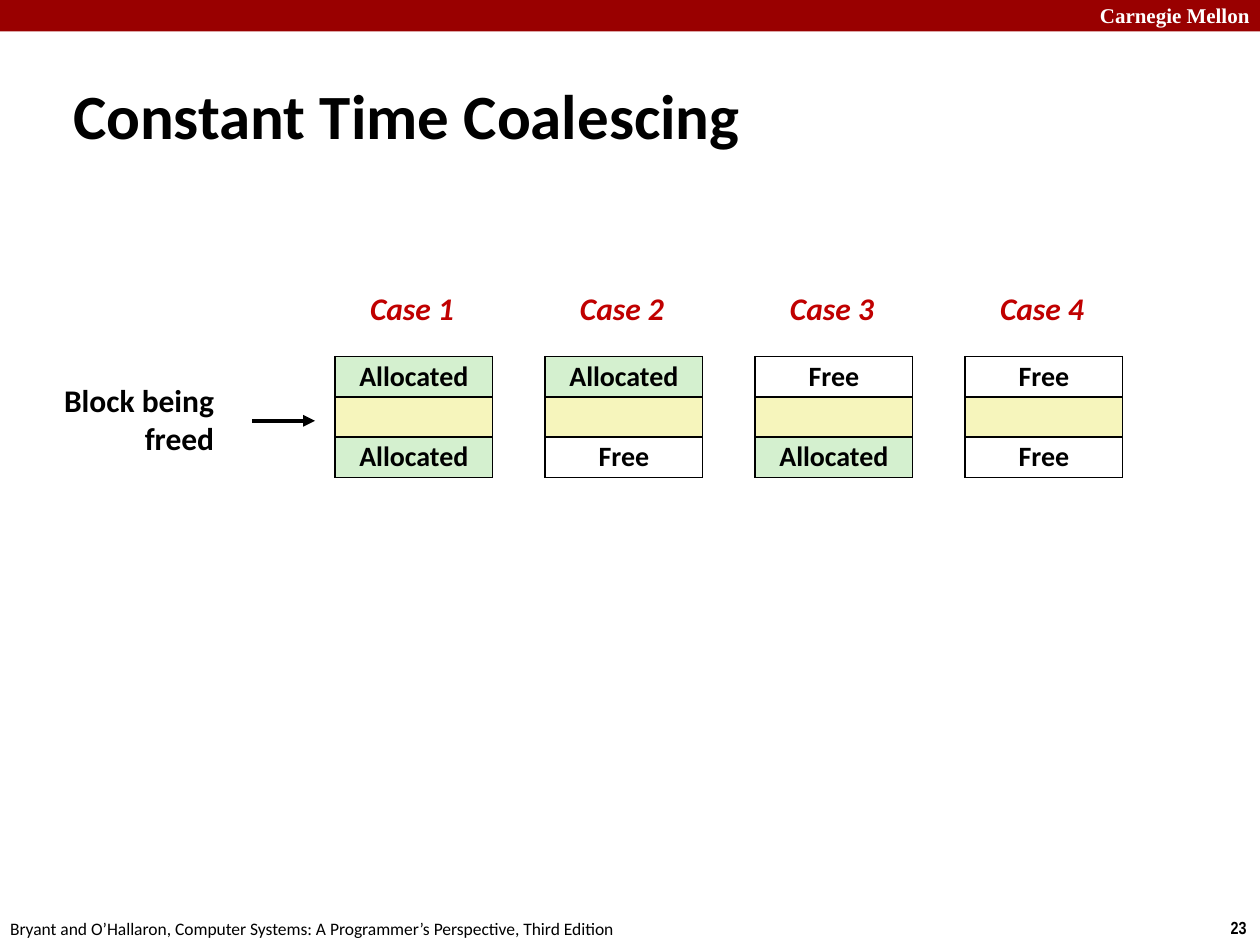
import pptx
import pptx.dml.color
import pptx.enum.shapes
import pptx.enum.text
import pptx.oxml
import pptx.oxml.ns
import pptx.util

Inches, Pt = pptx.util.Inches, pptx.util.Pt
ALIGN = pptx.enum.text.PP_ALIGN
MIDDLE = pptx.enum.text.MSO_ANCHOR.MIDDLE

COLORS = {"banner": "990000", "case": "C00000", "text": "000000", "white": "FFFFFF",
          "allocated": "D4F0CF", "freed": "F6F5BC"}

# Content
TITLE = "Constant Time Coalescing"
CASES = [
    ("Case 1", "Allocated", "Allocated"),
    ("Case 2", "Allocated", "Free"),
    ("Case 3", "Free", "Allocated"),
    ("Case 4", "Free", "Free"),
]
FILLS = {"Allocated": "allocated", "Free": "white", "": "freed"}

# Text formats
BANNER = {"name": "Times New Roman", "size": Pt(12), "bold": True, "color": "white"}
HEADING = {"name": "Calibri", "size": Pt(36), "bold": True, "color": "text"}
CASE = {"name": "Calibri", "size": Pt(18), "bold": True, "italic": True, "color": "case"}
LABEL = {"name": "Calibri", "size": Pt(18), "bold": True, "color": "text"}
CELL = {"name": "Calibri", "size": Pt(16), "bold": True, "color": "text"}
FOOTER = {"name": "Calibri", "size": Pt(10), "bold": False, "color": "text"}
NUMBER = {"name": "Arial Narrow", "size": Pt(10), "bold": True, "color": "text"}

# left, top, width, height, lines, format, alignment, line spacing
TEXTS = [
    (8.73, 0.02, 1.24, 0.23, ["Carnegie Mellon"], BANNER, ALIGN.LEFT, None),
    (0.45, 3.03, 1.25, 0.62, ["Block being", "freed"], LABEL, ALIGN.RIGHT, Pt(21.4)),
    (0.08, 7.31, 4.95, 0.17,
     ["Bryant and O’Hallaron, Computer Systems: A Programmer’s Perspective, Third Edition"],
     FOOTER, ALIGN.LEFT, Pt(10.4)),
    (9.73, 7.28, 0.2, 0.19, ["23"], NUMBER, ALIGN.CENTER, None),
]

# Layout of the cases
FIRST_LEFT, CASE_STEP = 2.66, 5 / 3
BLOCK_TOP, BLOCK_WIDTH, ROW_HEIGHT = 2.83, 1.25, 0.32
CASE_TOP, CASE_WIDTH, CASE_HEIGHT = 2.29, 0.7, 0.33


def rgb(name):
    return pptx.dml.color.RGBColor.from_string(COLORS[name])


def write(frame, lines, style, align, spacing=None):
    frame.margin_left = frame.margin_top = frame.margin_right = frame.margin_bottom = 0
    for index, line in enumerate(lines):
        paragraph = frame.add_paragraph() if index else frame.paragraphs[0]
        paragraph.alignment = align
        if spacing:
            paragraph.line_spacing = spacing
        run = paragraph.add_run()
        run.text = line
        for key, value in style.items():
            if key == "color":
                run.font.color.rgb = rgb(value)
            else:
                setattr(run.font, key, value)


def add_text(left, top, width, height, lines, style, align, spacing=None):
    box = slide.shapes.add_textbox(Inches(left), Inches(top), Inches(width), Inches(height))
    box.text_frame.word_wrap = True
    write(box.text_frame, lines, style, align, spacing)


def add_borders(cell):
    properties = cell._tc.get_or_add_tcPr()
    for index, side in enumerate(("lnL", "lnR", "lnT", "lnB")):
        properties.insert(index, pptx.oxml.parse_xml(
            f'<a:{side} {pptx.oxml.ns.nsdecls("a")} w="12700"><a:solidFill>'
            f'<a:srgbClr val="{COLORS["text"]}"/></a:solidFill></a:{side}>'))


def add_blocks(left, states):
    blocks = slide.shapes.add_table(
        len(states), 1, Inches(left), Inches(BLOCK_TOP),
        Inches(BLOCK_WIDTH), Inches(ROW_HEIGHT * len(states))).table
    blocks.first_row = blocks.horz_banding = False
    for row, state in enumerate(states):
        cell = blocks.cell(row, 0)
        cell.margin_left = cell.margin_top = cell.margin_right = cell.margin_bottom = 0
        cell.vertical_anchor = MIDDLE
        cell.fill.solid()
        cell.fill.fore_color.rgb = rgb(FILLS[state])
        add_borders(cell)
        if state:
            # Cell margins are kept on the cell, so only the run is formatted here
            paragraph = cell.text_frame.paragraphs[0]
            paragraph.alignment = ALIGN.CENTER
            run = paragraph.add_run()
            run.text = state
            run.font.name, run.font.size, run.font.bold = CELL["name"], CELL["size"], CELL["bold"]
            run.font.color.rgb = rgb(CELL["color"])


presentation = pptx.Presentation()
presentation.slide_width, presentation.slide_height = Inches(10), Inches(7.5)
slide = presentation.slides.add_slide(presentation.slide_layouts[5])

# Banner
banner = slide.shapes.add_shape(
    pptx.enum.shapes.MSO_SHAPE.RECTANGLE, 0, 0, Inches(10), Inches(0.25))
banner.shadow.inherit = False
banner.fill.solid()
banner.fill.fore_color.rgb = rgb("banner")
banner.line.fill.background()

# Title
title = slide.shapes.title
title.left, title.top, title.width, title.height = (Inches(n) for n in (0.58, 0.61, 5.4, 0.63))
title.text_frame.auto_size = pptx.enum.text.MSO_AUTO_SIZE.NONE
title.text_frame.vertical_anchor = pptx.enum.text.MSO_ANCHOR.TOP
write(title.text_frame, [TITLE], HEADING, ALIGN.LEFT)

# Banner text, side label, footer and page number
for entry in TEXTS:
    add_text(*entry)

# Cases with the block being freed between its neighbours
for number, (name, before, after) in enumerate(CASES):
    left = FIRST_LEFT + number * CASE_STEP
    add_text(left + 0.26, CASE_TOP, CASE_WIDTH, CASE_HEIGHT, [name], CASE, ALIGN.CENTER)
    add_blocks(left, (before, "", after))

# Arrow to the block being freed
arrow = slide.shapes.add_connector(
    pptx.enum.shapes.MSO_CONNECTOR.STRAIGHT,
    Inches(2), Inches(3.34), Inches(2.5), Inches(3.34))
arrow.line.color.rgb = rgb("text")
arrow.line.width = Pt(2.25)
for parent, xml in (
    (arrow.line._get_or_add_ln(), '<a:tailEnd {} type="triangle" w="med" len="med"/>'),
    (arrow._element.spPr, "<a:effectLst {}/>"),
):
    parent.append(pptx.oxml.parse_xml(xml.format(pptx.oxml.ns.nsdecls("a"))))

presentation.save("out.pptx")
